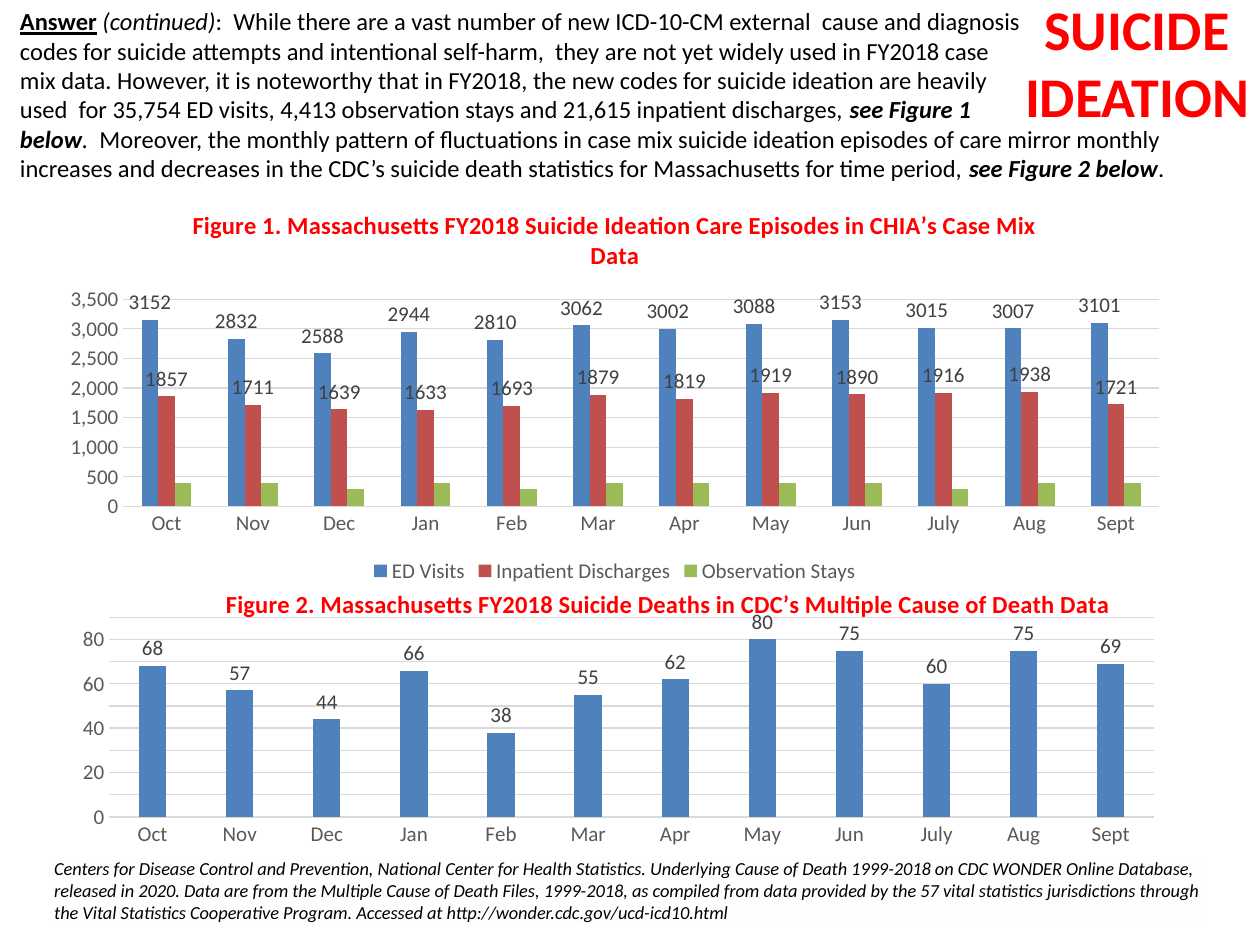
from lxml import etree
from pptx import Presentation
from pptx.chart.data import CategoryChartData
from pptx.dml.color import RGBColor
from pptx.enum.chart import (XL_CHART_TYPE, XL_LABEL_POSITION,
                             XL_LEGEND_POSITION, XL_TICK_MARK)
from pptx.enum.text import MSO_ANCHOR, MSO_AUTO_SIZE, PP_ALIGN
from pptx.oxml.ns import qn
from pptx.util import Inches, Pt

BLACK = RGBColor(0, 0, 0)
RED = RGBColor(0xFF, 0, 0)
BLUE = RGBColor(0x4F, 0x81, 0xBD)
BRICK = RGBColor(0xC0, 0x50, 0x4D)
GREEN = RGBColor(0x9B, 0xBB, 0x59)
GRAY = RGBColor(0x59, 0x59, 0x59)
DARK = RGBColor(0x40, 0x40, 0x40)
PALE = RGBColor(0xD9, 0xD9, 0xD9)
NOTE = RGBColor(0xFD, 0xFE, 0xFF)
FONT = "Calibri"
COLUMN = XL_CHART_TYPE.COLUMN_CLUSTERED
NO_TICK = XL_TICK_MARK.NONE
OUTSIDE = XL_LABEL_POSITION.OUTSIDE_END
BOTTOM = XL_LEGEND_POSITION.BOTTOM

# Paragraphs of (text, style) runs: b bold, i italic, u underlined
ANSWER = [
    [("Answer", "bu"), (" (continued)", "i"),
     (":  While there are a vast number of new ICD-10-CM external  cause and diagnosis", "")],
    [("codes for suicide attempts and intentional self-harm,  they are not yet "
      "widely used in FY2018 case", "")],
    [("mix data. However, it is noteworthy that in FY2018, the new codes for "
      "suicide ideation are heavily", "")],
    [("used  for 35,754 ED visits, 4,413 observation stays and 21,615 inpatient "
      "discharges, ", ""), ("see Figure 1", "bi")],
    [("below", "bi"), (".", "i"),
     ("  Moreover, the monthly pattern of fluctuations in case mix suicide ideation "
      "episodes of care mirror monthly increases and decreases in the CDC’s suicide "
      "death statistics for Massachusetts for time period, ", ""),
     ("see Figure 2 below", "bi"), (".", "")],
]
HEADING = [[("SUICIDE", "b")], [("IDEATION", "b")]]
SOURCE = [[(
    "Centers for Disease Control and Prevention, National Center for Health Statistics. "
    "Underlying Cause of Death 1999-2018 on CDC WONDER Online Database, released in 2020. "
    "Data are from the Multiple Cause of Death Files, 1999-2018, as compiled from data "
    "provided by the 57 vital statistics jurisdictions through the Vital Statistics "
    "Cooperative Program. Accessed at http://wonder.cdc.gov/ucd-icd10.html", "i")]]
MONTHS = ["Oct", "Nov", "Dec", "Jan", "Feb", "Mar",
          "Apr", "May", "Jun", "July", "Aug", "Sept"]

# Series are (name, colour, labelled, values)
CARE = dict(
    title="Figure 1. Massachusetts FY2018 Suicide Ideation Care Episodes in CHIA’s Case Mix Data",
    box=(0.38, 1.5, 9, 3.17), top=3500, step=500, legend=True,
    series=[
        ("ED Visits", BLUE, True,
         [3152, 2832, 2588, 2944, 2810, 3062, 3002, 3088, 3153, 3015, 3007, 3101]),
        ("Inpatient Discharges", BRICK, True,
         [1857, 1711, 1639, 1633, 1693, 1879, 1819, 1919, 1890, 1916, 1938, 1721]),
        ("Observation Stays", GREEN, False,
         [400, 400, 300, 400, 300, 400, 400, 400, 400, 300, 400, 400]),
    ])
DEATHS = dict(
    title="Figure 2. Massachusetts FY2018 Suicide Deaths in CDC’s Multiple Cause of Death Data",
    box=(0.42, 4.55, 8.92, 2.33), top=90, step=10, overlap=-27,
    spot=dict(x=0.15, y=0.03), plot=dict(x=0.05, y=0.15, w=0.93, h=0.68),
    series=[("Series 1", BLUE, True, [68, 57, 44, 66, 38, 55, 62, 80, 75, 60, 75, 69])])


def inches(*box):
    return [Inches(n) for n in box]


def set_font(font, size, color, bold=False):
    font.name, font.size, font.bold = FONT, Pt(size), bold
    font.color.rgb = color


def write(frame, paras, size=14, color=BLACK, align=PP_ALIGN.LEFT):
    frame.word_wrap = True
    for n, runs in enumerate(paras):
        para = frame.add_paragraph() if n else frame.paragraphs[0]
        para.alignment = align
        for text, style in runs:
            run = para.add_run()
            run.text = text
            set_font(run.font, size, color, "b" in style)
            run.font.italic = "i" in style
            run.font.underline = "u" in style


def place(owner, index, inner=False, **shares):
    """Give a chart part a manual layout, as shares of the chart's size."""
    for old in owner.findall(qn("c:layout")):
        owner.remove(old)
    layout = etree.Element(qn("c:layout"))
    manual = etree.SubElement(layout, qn("c:manualLayout"))
    items = [("layoutTarget", "inner")] if inner else []
    items += [("xMode", "edge"), ("yMode", "edge"), *shares.items()]
    for tag, val in items:
        etree.SubElement(manual, qn("c:" + tag)).set("val", str(val))
    owner.insert(index, layout)


def add_columns(slide, title, box, top, step, series,
                legend=False, overlap=None, spot=None, plot=None):
    data = CategoryChartData()
    data.categories = MONTHS
    for name, _, _, vals in series:
        data.add_series(name, vals)
    chart = slide.shapes.add_chart(COLUMN, *inches(*box), data).chart
    set_font(chart.font, 10, BLACK)
    chart.has_title = True
    write(chart.chart_title.text_frame, [[(title, "b")]], color=RED,
          align=PP_ALIGN.CENTER)
    chart.chart_title.include_in_layout = False
    chart.has_legend = legend
    if legend:
        chart.legend.position = BOTTOM
        chart.legend.include_in_layout = False
        set_font(chart.legend.font, 12, GRAY)

    cats, vals = chart.category_axis, chart.value_axis
    for axis in (cats, vals):
        axis.major_tick_mark = axis.minor_tick_mark = NO_TICK
        set_font(axis.tick_labels.font, 12, GRAY)
    vals.minimum_scale, vals.maximum_scale, vals.major_unit = 0, top, step
    vals.tick_labels.number_format = "#,##0"
    vals.tick_labels.number_format_is_linked = False
    vals.format.line.fill.background()
    for line in (cats.format.line, vals.major_gridlines.format.line):
        line.color.rgb, line.width = PALE, Pt(0.75)

    bars = chart.plots[0]
    bars.gap_width, bars.vary_by_categories = 219, False
    if overlap is not None:
        bars.overlap = overlap
    for item, (_, color, labelled, _) in zip(bars.series, series):
        item.format.fill.solid()
        item.format.fill.fore_color.rgb = color
        if labelled:
            labels = item.data_labels
            labels.show_value, labels.position = True, OUTSIDE
            set_font(labels.font, 12, DARK)

    root = chart.element if hasattr(chart, "element") else chart._chartSpace
    if spot:
        place(root.find(".//" + qn("c:title")), 1, **spot)
    if plot:
        place(root.find(".//" + qn("c:plotArea")), 0, inner=True, **plot)


def main():
    prs = Presentation()
    prs.slide_width, prs.slide_height = inches(10, 7.5)
    slide = prs.slides.add_slide(prs.slide_layouts[5])

    answer = slide.shapes.add_textbox(*inches(0.06, 0, 9.89, 1.17))
    write(answer.text_frame, ANSWER)

    head = slide.shapes.title
    head.left, head.top, head.width, head.height = inches(7.77, -0.1, 2.51, 1.18)
    head.text_frame.auto_size = MSO_AUTO_SIZE.NONE
    head.text_frame.vertical_anchor = MSO_ANCHOR.MIDDLE
    write(head.text_frame, HEADING, size=32, color=RED, align=PP_ALIGN.CENTER)

    for figure in (CARE, DEATHS):
        add_columns(slide, **figure)

    table = slide.shapes.add_table(1, 1, *inches(0.42, 6.8, 9.16, 0.55)).table
    table.first_row = table.horz_banding = False
    cell = table.cell(0, 0)
    cell.fill.solid()
    cell.fill.fore_color.rgb = NOTE
    cell.margin_left = cell.margin_right = Inches(0.01)
    cell.margin_top = cell.margin_bottom = Inches(0.01)
    write(cell.text_frame, SOURCE, size=10.5)

    prs.save("out.pptx")


if __name__ == "__main__":
    main()
